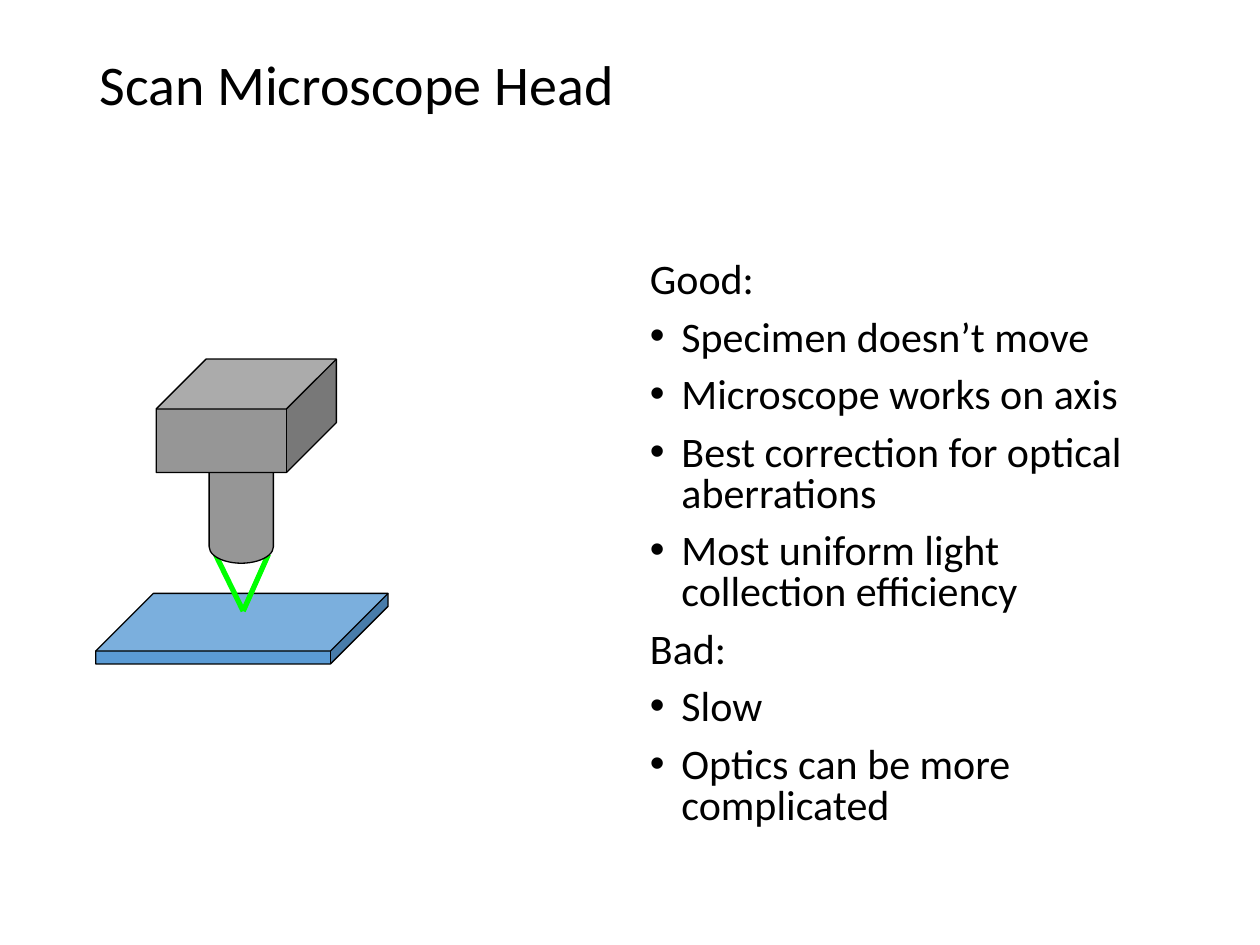
from dataclasses import dataclass

import pptx
import pptx.dml.color
import pptx.enum.shapes
import pptx.enum.text
import pptx.oxml.ns
import pptx.slide
import pptx.util
from lxml import etree

Inches = pptx.util.Inches
RGBColor = pptx.dml.color.RGBColor
Preset = pptx.enum.shapes.MSO_SHAPE

BLACK = RGBColor(0x00, 0x00, 0x00)
STAGE_BLUE = RGBColor(0x5B, 0x9B, 0xD5)
HEAD_GRAY = RGBColor(0x96, 0x96, 0x96)
BEAM_GREEN = RGBColor(0x00, 0xFF, 0x00)
FONT = "Calibri"
BULLET = "•"


@dataclass(frozen=True)
class Solid:
    preset: Preset
    left: float
    top: float
    width: float
    height: float
    depth: float
    color: RGBColor


SPECIMEN = Solid(Preset.CUBE, 0.76, 4.71, 2.32, 0.56, 0.817, STAGE_BLUE)
OBJECTIVE = Solid(Preset.CAN, 1.66, 3.42, 0.51, 1.05, 0.514, HEAD_GRAY)
SCAN_HEAD = Solid(Preset.CUBE, 1.24, 2.85, 1.43, 0.9, 0.44, HEAD_GRAY)
BEAM_STARTS = (1.71, 2.13)
BEAM_TOP = 4.4
FOCUS = (1.93, 4.85)

ASSESSMENT = {
    "Good:": (
        "Specimen doesn’t move",
        "Microscope works on axis",
        "Best correction for optical aberrations",
        "Most uniform light collection efficiency",
    ),
    "Bad:": ("Slow", "Optics can be more complicated"),
}


def draw_solid(page: pptx.slide.Slide, solid: Solid) -> None:
    shape = page.shapes.add_shape(
        solid.preset, Inches(solid.left), Inches(solid.top),
        Inches(solid.width), Inches(solid.height),
    )
    shape.adjustments[0] = solid.depth
    shape.shadow.inherit = False
    shape.fill.solid()
    shape.fill.fore_color.rgb = solid.color
    shape.line.color.rgb = BLACK
    shape.line.width = pptx.util.Pt(0.75)


def draw_beam(page: pptx.slide.Slide, start: float) -> None:
    beam = page.shapes.add_connector(
        pptx.enum.shapes.MSO_CONNECTOR.STRAIGHT,
        Inches(start), Inches(BEAM_TOP), Inches(FOCUS[0]), Inches(FOCUS[1]),
    )
    beam.line.color.rgb = BEAM_GREEN
    beam.line.width = pptx.util.Pt(3)
    etree.SubElement(beam.element.spPr, pptx.oxml.ns.qn("a:effectLst"))


def add_text(
    page: pptx.slide.Slide,
    lines: list[str],
    *,
    left: float,
    top: float,
    width: float,
    height: float,
    size: float,
    line_spacing: float,
    space_before: float = 0,
    indent: float = 0,
    bulleted: tuple[str, ...] = (),
) -> None:
    box = page.shapes.add_textbox(
        Inches(left), Inches(top), Inches(width), Inches(height)
    )
    frame = box.text_frame
    frame.word_wrap = True
    frame.vertical_anchor = pptx.enum.text.MSO_ANCHOR.TOP
    for index, line in enumerate(lines):
        para = frame.paragraphs[0] if index == 0 else frame.add_paragraph()
        para.line_spacing = line_spacing
        para.space_before = pptx.util.Pt(space_before if index else 0)
        properties = para._p.get_or_add_pPr()
        properties.set("marL", str(Inches(indent)))
        properties.set("indent", str(-Inches(indent)))
        if line in bulleted:
            typeface = etree.SubElement(properties, pptx.oxml.ns.qn("a:buFont"))
            typeface.set("typeface", "Arial")
            mark = etree.SubElement(properties, pptx.oxml.ns.qn("a:buChar"))
            mark.set("char", BULLET)
        span = para.add_run()
        span.text = line
        span.font.name = FONT
        span.font.size = pptx.util.Pt(size)
        span.font.color.rgb = BLACK


def main() -> None:
    deck = pptx.Presentation()
    deck.slide_width = Inches(10)
    deck.slide_height = Inches(7.5)
    page = deck.slides.add_slide(deck.slide_layouts[6])

    draw_solid(page, SPECIMEN)
    for start in BEAM_STARTS:
        draw_beam(page, start)
    draw_solid(page, OBJECTIVE)
    draw_solid(page, SCAN_HEAD)

    add_text(
        page, ["Scan Microscope Head"], left=0.69, top=0.4, width=8.62,
        height=1.45, size=32, line_spacing=0.9,
    )
    points = tuple(point for group in ASSESSMENT.values() for point in group)
    lines = [
        line for heading, group in ASSESSMENT.items() for line in (heading, *group)
    ]
    add_text(
        page, lines, left=5.06, top=2.03, width=4.25, height=4.76, size=24,
        line_spacing=0.8, space_before=10, indent=0.25, bulleted=points,
    )
    deck.save("out.pptx")


if __name__ == "__main__":
    main()
